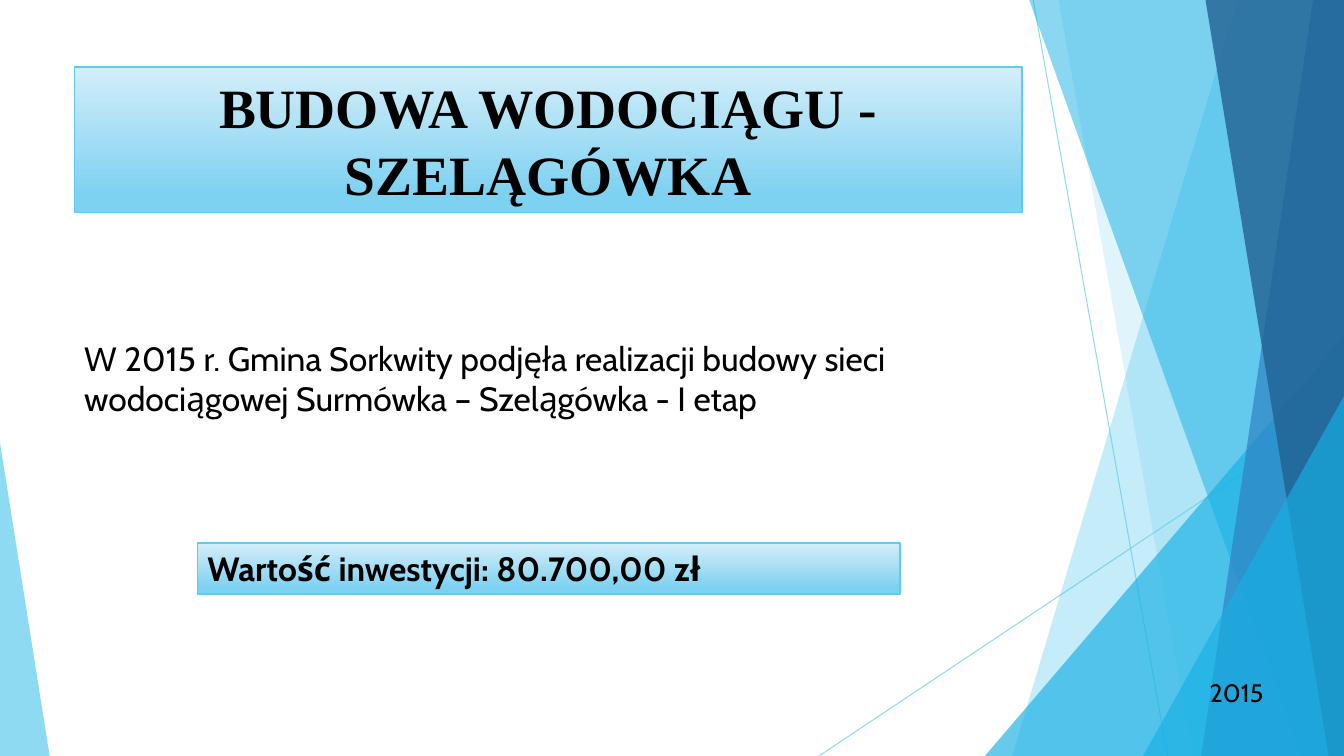
from lxml.etree import SubElement
from pptx import Presentation
from pptx.dml.color import RGBColor
from pptx.enum.shapes import MSO_CONNECTOR, MSO_SHAPE
from pptx.enum.text import MSO_ANCHOR, MSO_AUTO_SIZE, PP_ALIGN
from pptx.oxml.ns import qn
from pptx.util import Pt

COLORS = {
    "sky": "5FCBEF", "cyan": "17B0E4", "blue": "2E83C3", "navy": "226292",
    "pale": "D4EEF9", "soft": "7DD1F1", "black": "000000",
}
WIDTH, HEIGHT = 960, 540


class SlideBuilder:
    def __init__(self, page):
        self.page = page
        self.font = "Cabin"

    def color(self, name):
        return RGBColor.from_string(COLORS[name])

    def set_alpha(self, fill_parent, opacity):
        tint = fill_parent.find(qn("a:solidFill"))[0]
        SubElement(tint, qn("a:alpha"), val=str(opacity * 1000))

    def tint(self, shape, name, opacity):
        shape.shadow.inherit = False
        shape.fill.solid()
        shape.fill.fore_color.rgb = self.color(name)
        self.set_alpha(shape.element.spPr, opacity)
        shape.line.fill.background()

    def ray(self, x1, y1, x2, y2):
        line = self.page.shapes.add_connector(
            MSO_CONNECTOR.STRAIGHT, Pt(x1), Pt(y1), Pt(x2), Pt(y2))
        line.line.color.rgb = self.color("sky")
        line.line.width = Pt(0.75)
        properties = line.element.spPr
        self.set_alpha(properties.find(qn("a:ln")), 70)
        SubElement(properties, qn("a:effectLst"))

    def band(self, top_x, bottom_x, name, opacity):
        """Fill from a slanted left edge to the right edge of the page."""
        top = Pt(-0.6)
        builder = self.page.shapes.build_freeform(Pt(top_x), top)
        builder.add_line_segments([
            (Pt(WIDTH), top), (Pt(WIDTH), Pt(HEIGHT)), (Pt(bottom_x), Pt(HEIGHT))])
        self.tint(builder.convert_to_shape(), name, opacity)

    def corner(self, left, top, width, apex, name, opacity):
        """Triangle standing on the bottom edge of the page."""
        shape = self.page.shapes.add_shape(
            MSO_SHAPE.ISOSCELES_TRIANGLE, Pt(left), Pt(top), Pt(width), Pt(HEIGHT - top))
        shape.adjustments[0] = apex
        self.tint(shape, name, opacity)

    def panel(self, shape):
        shape.fill.gradient()
        shape.fill.gradient_angle = 270
        for stop, name, position in zip(
                shape.fill.gradient_stops, ("pale", "soft"), (0, 0.88)):
            stop.color.rgb = self.color(name)
            stop.position = position
        shape.line.color.rgb = self.color("sky")
        shape.line.width = Pt(1)

    def add_span(self, shape, text, size, bold=False, font=None,
                 align=PP_ALIGN.LEFT, anchor=MSO_ANCHOR.TOP):
        frame = shape.text_frame
        frame.word_wrap = True
        frame.auto_size = MSO_AUTO_SIZE.NONE
        frame.vertical_anchor = anchor
        para = frame.paragraphs[0]
        para.alignment = align
        span = para.add_run()
        span.text = text
        span.font.name = font or self.font
        span.font.size = Pt(size)
        span.font.bold = bold
        span.font.color.rgb = self.color("black")

    def title(self, text, left, top, width, height):
        box = self.page.shapes.title
        box.left, box.top, box.width, box.height = map(Pt, (left, top, width, height))
        self.panel(box)
        self.add_span(box, text, 39.6, True, "Times New Roman",
                      PP_ALIGN.CENTER, MSO_ANCHOR.MIDDLE)

    def text(self, text, left, top, width, height, size, bold=False, framed=False):
        box = self.page.shapes.add_textbox(Pt(left), Pt(top), Pt(width), Pt(height))
        if framed:
            self.panel(box)
        self.add_span(box, text, size, bold)


def main():
    deck = Presentation()
    deck.slide_width, deck.slide_height = Pt(WIDTH), Pt(HEIGHT)
    slide = SlideBuilder(deck.slides.add_slide(deck.slide_layouts[5]))

    # Background facets
    slide.ray(738, 0, 834, HEIGHT)
    slide.ray(WIDTH, 290, 585, HEIGHT)
    slide.band(884, 723, "sky", 36)
    slide.band(756, 852, "sky", 20)
    slide.corner(703.5, 240, 256.5, 1, "cyan", 66)
    slide.band(735, 929.5, "cyan", 50)
    slide.band(938, 858, "blue", 70)
    slide.band(861, 949, "navy", 80)
    slide.corner(816.5, 283, 143.5, 1, "cyan", 66)
    slide.corner(0, 316, 35.5, 0, "sky", 70)

    # Title and investment details
    slide.title("BUDOWA WODOCIĄGU - SZELĄGÓWKA", 53, 48, 677, 104)
    slide.text("Wartość inwestycji: 80.700,00 zł", 141, 388, 502, 36.4, 24,
               bold=True, framed=True)
    slide.text("W 2015 r. Gmina Sorkwity podjęła realizacji budowy sieci "
               "wodociągowej Surmówka – Szelągówka - I etap", 53, 237.5, 677, 65.5, 24)
    slide.text("2015", 857, 480.5, 89, 29, 18)

    deck.save("out.pptx")


if __name__ == "__main__":
    main()
